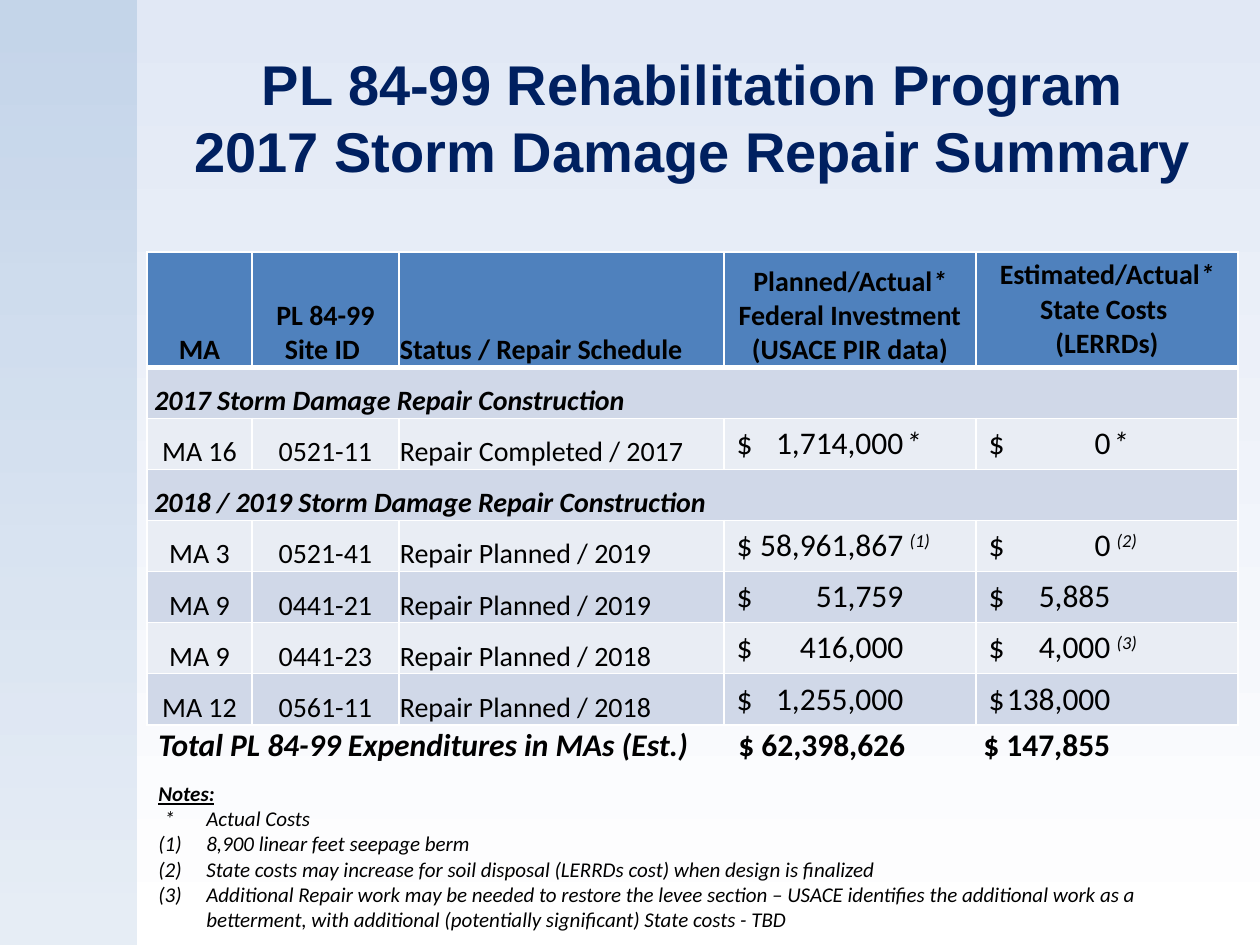
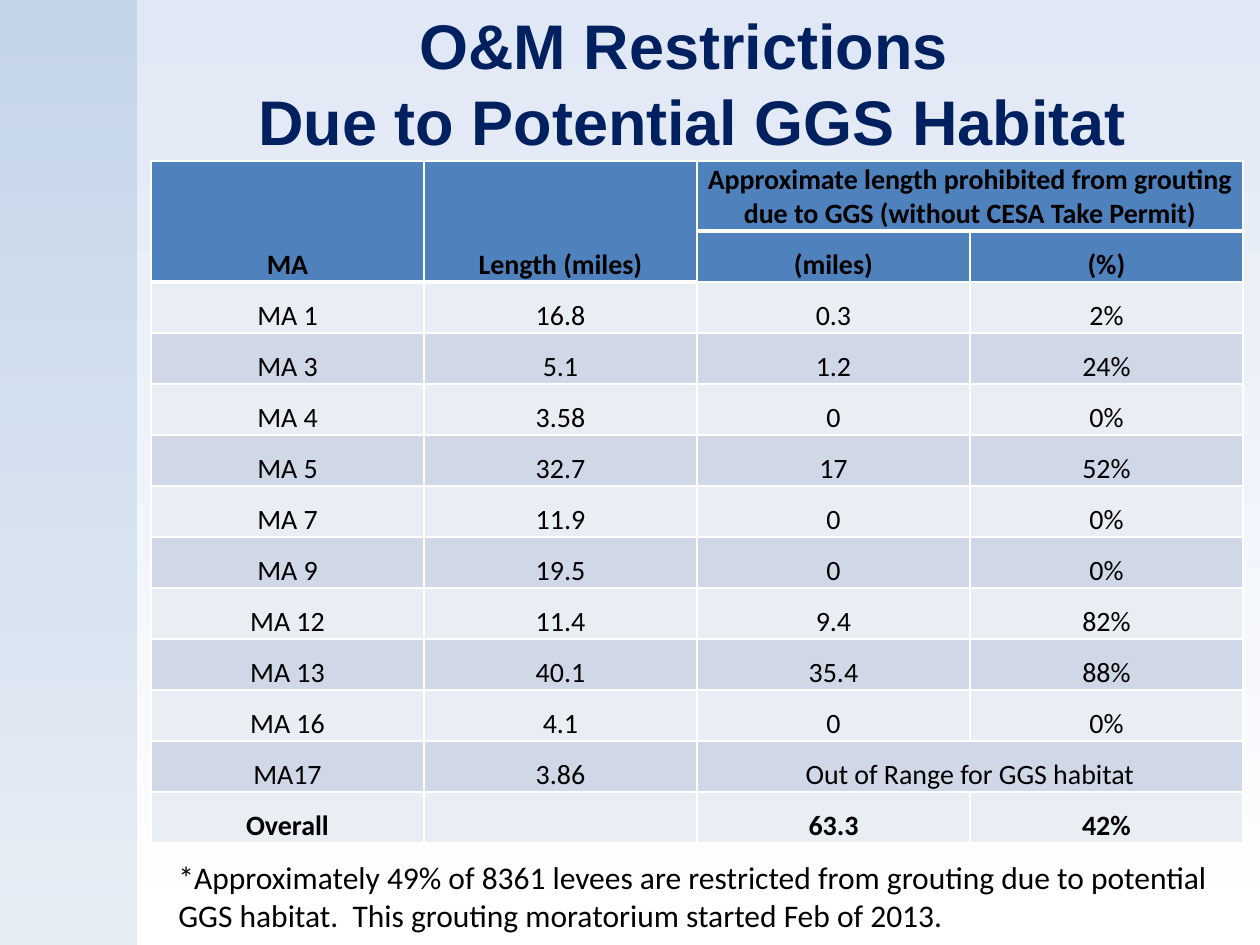
from dataclasses import dataclass

import lxml.etree
import pptx
import pptx.dml.color
import pptx.enum.shapes
import pptx.enum.text
import pptx.oxml.ns
import pptx.util

PX = 914400 / 126  # EMU in one px
ALIGN = pptx.enum.text.PP_ALIGN
ANCHOR = pptx.enum.text.MSO_ANCHOR
qn = pptx.oxml.ns.qn


@dataclass(frozen=True)
class Theme:
    title_font: str = "Arial"
    body_font: str = "Calibri"
    title: str = "002060"
    text: str = "000000"
    background: tuple[str, str] = ("E1E8F5", "FFFFFF")
    band: tuple[str, str] = ("B9CDE5", "DCE6F2")
    band_opacity: int = 70
    header: str = "4F81BD"
    dark_row: str = "D0D8E8"
    light_row: str = "E9EDF4"
    border: str = "FFFFFF"
    thin: int = 1
    thick: int = 3
    body_size: int = 16
    money_size: int = 18
    note_size: int = 12


THEME = Theme()


@dataclass(frozen=True)
class Box:
    left: int
    top: int
    width: int
    height: int

    def emu(self) -> tuple[int, ...]:
        return tuple(px(n) for n in (self.left, self.top, self.width, self.height))


@dataclass(frozen=True)
class Run:
    text: str
    size: int = THEME.body_size
    bold: bool = False
    italic: bool = False
    raised: bool = False


@dataclass(frozen=True)
class Cell:
    paragraphs: tuple[tuple[Run, ...], ...]
    fill: str
    align: ALIGN = ALIGN.CENTER
    roomy: bool = False  # normal margins and top anchor
    tabs: tuple[tuple[int, str], ...] = ()
    columns: int = 1
    rows: int = 1


def px(length: float) -> int:
    return round(length * PX)


def rgb(color: str) -> pptx.dml.color.RGBColor:
    return pptx.dml.color.RGBColor.from_string(color)


def write_text(paragraph, text: str, *, size: int, family: str = THEME.body_font,
               color: str = THEME.text, bold: bool = False, italic: bool = False,
               underline: bool = False, raised: bool = False) -> None:
    run = paragraph.add_run()
    run.text = text
    font = run.font
    font.size = pptx.util.Pt(size)
    font.name = family
    font.color.rgb = rgb(color)
    font.bold, font.italic, font.underline = bold, italic, underline
    if raised:
        run._r.get_or_add_rPr().set("baseline", "30000")


def set_tabs(paragraph, tabs: tuple[tuple[int, str], ...]) -> None:
    tab_list = lxml.etree.SubElement(paragraph._p.get_or_add_pPr(), qn("a:tabLst"))
    for position, align in tabs:
        lxml.etree.SubElement(tab_list, qn("a:tab"), pos=str(px(position)), algn=align)


def set_gradient(fill, colors: tuple[str, str]) -> None:
    """Fill from top to bottom."""
    fill.gradient()
    fill.gradient_angle = 270
    for stop, color in zip(fill.gradient_stops, colors):
        stop.color.rgb = rgb(color)


def style_master(presentation, slide) -> None:
    """Give the master its background and the left band."""
    master = presentation.slide_master
    set_gradient(master.background.fill, THEME.background)
    band = slide.shapes.add_shape(pptx.enum.shapes.MSO_SHAPE.RECTANGLE,
                                  *Box(0, 0, 137, 945).emu())
    band.shadow.inherit = False
    band.line.fill.background()
    set_gradient(band.fill, THEME.band)
    for color in band._element.spPr.iter(qn("a:srgbClr")):
        lxml.etree.SubElement(color, qn("a:alpha"), val=str(THEME.band_opacity * 1000))
    band._element.nvSpPr.cNvPr.set("id", "100")
    master.shapes._spTree.insert(2, band._element)


def set_title(slide, lines: tuple[str, ...], box: Box, size: int) -> None:
    title = slide.shapes.title
    title.left, title.top, title.width, title.height = box.emu()
    frame = title.text_frame
    frame.auto_size = pptx.enum.text.MSO_AUTO_SIZE.NONE
    frame.word_wrap = True
    frame.vertical_anchor = ANCHOR.MIDDLE
    paragraph = frame.paragraphs[0]
    paragraph.alignment = ALIGN.CENTER
    for index, line in enumerate(lines):
        if index:
            paragraph.add_line_break()
        write_text(paragraph, line, size=size, family=THEME.title_font,
                   color=THEME.title, bold=True)
    for line_break in paragraph._p.findall(qn("a:br")):
        lxml.etree.SubElement(line_break, qn("a:rPr"), sz=str(size * 100))


def add_text_frame(slide, box: Box):
    frame = slide.shapes.add_textbox(*box.emu()).text_frame
    frame.word_wrap = True
    return frame


def set_borders(cell, top: int, bottom: int) -> None:
    properties = cell._tc.get_or_add_tcPr()
    widths = {"L": THEME.thin, "R": THEME.thin, "T": top, "B": bottom}
    for side, width in widths.items():
        line = lxml.etree.SubElement(properties, qn(f"a:ln{side}"),
                                     w=str(pptx.util.Pt(width)))
        solid = lxml.etree.SubElement(line, qn("a:solidFill"))
        lxml.etree.SubElement(solid, qn("a:srgbClr"), val=THEME.border)


def fill_cell(cell, content: Cell) -> None:
    cell.fill.solid()
    cell.fill.fore_color.rgb = rgb(content.fill)
    if not content.roomy:
        cell.vertical_anchor = ANCHOR.BOTTOM
        cell.margin_left = cell.margin_right = cell.margin_top = px(1)
        cell.margin_bottom = 0
    for index, runs in enumerate(content.paragraphs):
        frame = cell.text_frame
        paragraph = frame.add_paragraph() if index else frame.paragraphs[0]
        paragraph.alignment = content.align
        if content.tabs:
            set_tabs(paragraph, content.tabs)
        for run in runs:
            write_text(paragraph, run.text, size=run.size, bold=run.bold,
                       italic=run.italic, raised=run.raised)


def add_table(slide, left: int, top: int, widths: list[int], heights: list[int],
              rows: list[list[Cell | None]], thick_below: set[tuple[int, int]]) -> None:
    """Draw rows of cells; None marks a place covered by a merged cell."""
    box = Box(left, top, sum(widths), sum(heights))
    table = slide.shapes.add_table(len(rows), len(widths), *box.emu()).table
    table.first_row = table.horz_banding = False
    for column, width in zip(table.columns, widths):
        column.width = px(width)
    for row, height in zip(table.rows, heights):
        row.height = px(height)
    for r, row in enumerate(rows):
        for c, content in enumerate(row):
            cell = table.cell(r, c)
            set_borders(cell, THEME.thick if (r - 1, c) in thick_below else THEME.thin,
                        THEME.thick if (r, c) in thick_below else THEME.thin)
            if content is None:
                continue
            fill_cell(cell, content)
            if content.columns > 1 or content.rows > 1:
                cell.merge(table.cell(r + content.rows - 1, c + content.columns - 1))


def header(text: str, **options) -> Cell:
    return Cell(((Run(text, bold=True),),), THEME.header, **options)


def starred_header(before: str, after: str, *more: str, **options) -> Cell:
    first = (Run(before, bold=True), Run("*", bold=True, italic=True), Run(after, bold=True))
    rest = tuple((Run(text, bold=True),) for text in more)
    return Cell((first, *rest), THEME.header, **options)


def body(text: str, fill: str, **options) -> Cell:
    return Cell(((Run(text),),), fill, **options)


def section_row(text: str) -> list[Cell | None]:
    heading = Run(text, bold=True, italic=True)
    return [Cell(((heading,),), THEME.dark_row, ALIGN.LEFT, columns=5)] + [None] * 4


def money(amount: str, mark: str, edge: int, fill: str) -> Cell:
    """Dollar sign at left, amount ending at edge, then its note mark."""
    runs = [Run(f"$\t{amount}", THEME.money_size)]
    if mark:
        runs.append(Run("\t", THEME.money_size))
        runs.append(Run(mark, THEME.money_size, italic=True, raised=mark != "*"))
    return Cell((tuple(runs),), fill, ALIGN.LEFT, roomy=True,
                tabs=((edge, "r"), (edge + 2, "l")))


def site_row(area: str, site: str, status: str, federal: str, federal_mark: str,
             state: str, state_mark: str, fill: str) -> list[Cell]:
    return [body(area, fill), body(site, fill), body(status, fill, align=ALIGN.LEFT),
            money(federal, federal_mark, 167, fill), money(state, state_mark, 122, fill)]


def build_repair_summary(slide) -> None:
    set_title(slide, ("PL 84-99 Rehabilitation Program", "2017 Storm Damage Repair Summary"),
              Box(126, 38, 1134, 157), 32)
    light, dark = THEME.light_row, THEME.dark_row
    rows = [
        [header("MA"), header("PL 84-99 Site ID "),
         header("Status / Repair Schedule", align=ALIGN.LEFT),
         starred_header("Planned/Actual", " Federal Investment (USACE PIR data)"),
         starred_header("Estimated/Actual", " State Costs ", "(LERRDs)", roomy=True)],
        section_row(" 2017 Storm Damage Repair Construction"),
        site_row("MA 16", "0521-11", "Repair Completed / 2017", "1,714,000", "*", "0", "*", light),
        section_row(" 2018 / 2019 Storm Damage Repair Construction"),
        site_row("MA 3", "0521-41", "Repair Planned / 2019",
                 "58,961,867", " (1)", "0", " (2)", light),
        site_row("MA 9", "0441-21", "Repair Planned / 2019", "51,759", "", "5,885", "", dark),
        site_row("MA 9", "0441-23", "Repair Planned / 2018", "416,000", "", "4,000", " (3)", light),
        site_row("MA 12", "0561-11", "Repair Planned / 2018", "1,255,000", "", "138,000", "", dark),
    ]
    add_table(slide, 147, 252, [105, 147, 325, 252, 262], [115] + [51] * 7, rows,
              {(0, column) for column in range(5)})

    # Totals line and notes
    frame = add_text_frame(slide, Box(146, 719, 1094, 224))
    total = frame.paragraphs[0]
    set_tabs(total, ((580, "l"), (825, "l")))
    write_text(total, "Total PL 84-99 Expenditures in MAs (Est.)",
               size=THEME.money_size, bold=True, italic=True)
    write_text(total, "\t$ 62,398,626\t$ 147,855", size=THEME.money_size, bold=True)
    heading = frame.add_paragraph()
    heading.space_before = pptx.util.Pt(10)
    write_text(heading, "Notes:", size=THEME.note_size, bold=True, italic=True, underline=True)
    notes = (
        "*\tActual Costs",
        "8,900 linear feet seepage berm",
        "State costs may increase for soil disposal (LERRDs cost) when design is finalized",
        "Additional Repair work may be needed to restore the levee section – USACE identifies "
        "the additional work as a betterment, with additional (potentially significant) "
        "State costs - TBD",
    )
    for number, note in enumerate(notes):
        paragraph = frame.add_paragraph()
        properties = paragraph._p.get_or_add_pPr()
        properties.set("marL", str(px(48)))
        properties.set("indent", str(px(-48 if number else -42)))
        if number:
            lxml.etree.SubElement(properties, qn("a:buAutoNum"), type="arabicParenBoth")
        write_text(paragraph, note, size=THEME.note_size, italic=True)


def build_restrictions(slide) -> None:
    set_title(slide, ("O&M Restrictions ", "Due to Potential GGS Habitat"),
              Box(126, 4, 1133, 157), 36)
    areas = (
        ("MA 1", "16.8", "0.3", "2%"),
        ("MA 3", "5.1", "1.2", "24%"),
        ("MA 4", "3.58", "0", "0%"),
        ("MA 5", "32.7", "17", "52%"),
        ("MA 7", "11.9", "0", "0%"),
        ("MA 9", "19.5", "0", "0%"),
        ("MA 12", "11.4", "9.4", "82%"),
        ("MA 13", "40.1", "35.4", "88%"),
        ("MA 16", "4.1", "0", "0%"),
    )
    light, dark = THEME.light_row, THEME.dark_row
    rows = [
        [header("MA", rows=2), header("Length (miles)", rows=2),
         header("Approximate length prohibited from grouting due to GGS "
                "(without CESA Take Permit)", columns=2), None],
        [None, None, header("(miles)"), header("(%)")],
    ]
    for index, area in enumerate(areas):
        rows.append([body(value, dark if index % 2 else light) for value in area])
    rows.append([body("MA17", dark), body("3.86", dark),
                 body("Out of Range for GGS habitat", dark, columns=2), None])
    rows.append([Cell(((Run(value, bold=True),),) if value else (), light)
                 for value in ("Overall", "", "63.3", "42%")])
    add_table(slide, 151, 161, [273] * 4, [70] + [51] * 12, rows,
              {(0, 0), (0, 1), (0, 2), (0, 3), (1, 0), (1, 1)})

    # Footnote
    frame = add_text_frame(slide, Box(166, 852, 1092, 89))
    write_text(frame.paragraphs[0],
               "*Approximately 49% of 8361 levees are restricted from grouting due to potential "
               "GGS habitat.  This grouting moratorium started Feb of 2013.",
               size=THEME.money_size)


def main() -> None:
    presentation = pptx.Presentation()
    presentation.slide_width, presentation.slide_height = px(1260), px(945)
    title_only = presentation.slide_layouts[5]
    for number, build in enumerate((build_repair_summary, build_restrictions)):
        slide = presentation.slides.add_slide(title_only)
        if number == 0:
            style_master(presentation, slide)
        build(slide)
    presentation.save("out.pptx")


if __name__ == "__main__":
    main()
